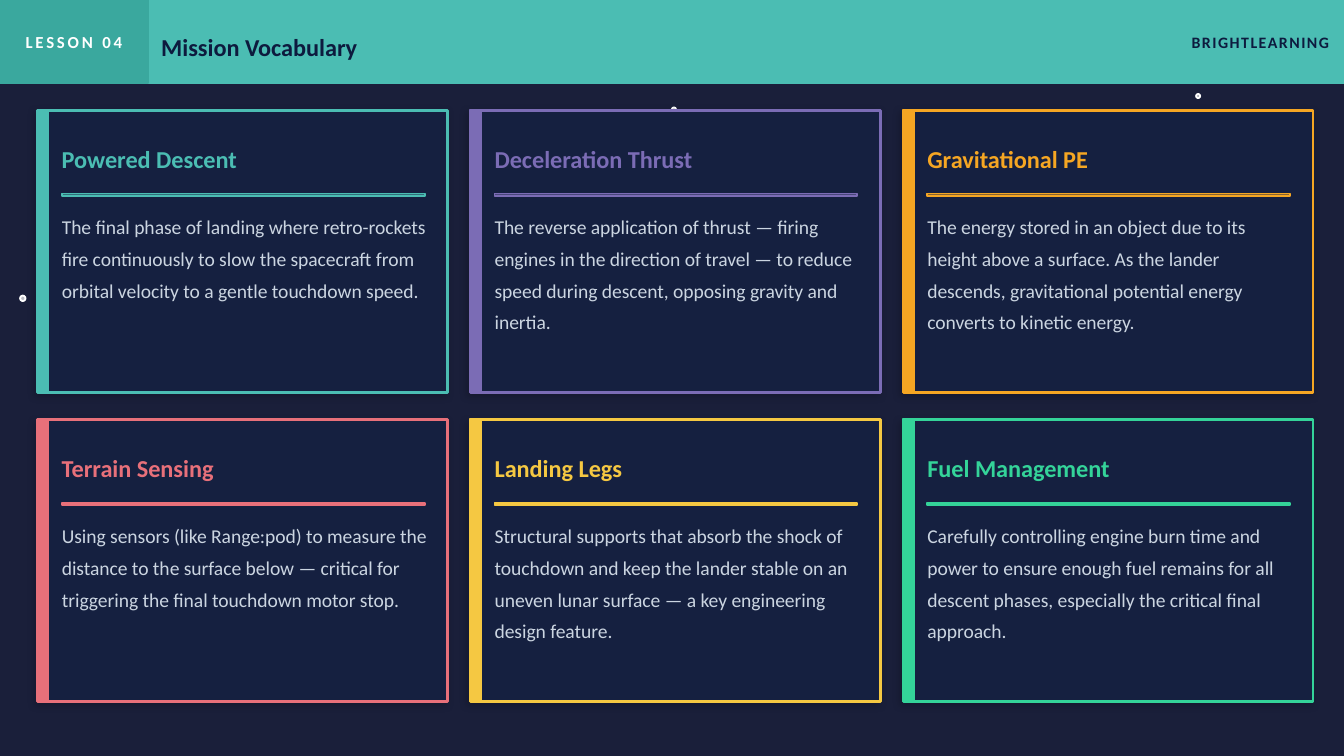
from lxml import etree
from pptx import Presentation
from pptx.dml.color import RGBColor
from pptx.enum.shapes import MSO_SHAPE
from pptx.enum.text import MSO_ANCHOR, PP_ALIGN
from pptx.oxml.ns import qn
from pptx.util import Inches, Pt

RECT, OVAL = MSO_SHAPE.RECTANGLE, MSO_SHAPE.OVAL
TOP, MIDDLE = MSO_ANCHOR.TOP, MSO_ANCHOR.MIDDLE
LEFT, CENTER, RIGHT = PP_ALIGN.LEFT, PP_ALIGN.CENTER, PP_ALIGN.RIGHT

BACKGROUND = RGBColor(0x1A, 0x1F, 0x3A)
CARD = RGBColor(0x15, 0x20, 0x40)
NAVY = RGBColor(0x0D, 0x1B, 0x3E)
WHITE = RGBColor(0xFF, 0xFF, 0xFF)
BODY = RGBColor(0xCB, 0xD5, 0xE1)
TEAL = RGBColor(0x4B, 0xBD, 0xB3)
DARK_TEAL = RGBColor(0x3A, 0xA8, 0x9E)
PURPLE = RGBColor(0x7B, 0x6C, 0xB5)
ORANGE = RGBColor(0xF5, 0xA6, 0x23)
CORAL = RGBColor(0xE8, 0x70, 0x7A)
YELLOW = RGBColor(0xF5, 0xC8, 0x42)
GREEN = RGBColor(0x34, 0xD3, 0x99)

prs = Presentation()
prs.slide_width = Inches(10)
prs.slide_height = prs.slide_width * 9 // 16
s = prs.slides.add_slide(prs.slide_layouts[6])
s.background.fill.solid()
s.background.fill.fore_color.rgb = BACKGROUND


def add_box(x, y, w, h, fill, line=None, width=1, kind=RECT, opacity=100):
    """Add a filled shape; the outline takes the fill colour unless line is given."""
    sp = s.shapes.add_shape(kind, Inches(x), Inches(y), Inches(w), Inches(h))
    sp.shadow.inherit = False
    sp.fill.solid()
    sp.fill.fore_color.rgb = fill
    sp.line.color.rgb = line or fill
    sp.line.width = Pt(width)
    if opacity < 100:
        color = sp._element.spPr.find(qn("a:solidFill"))[0]
        etree.SubElement(color, qn("a:alpha"), val=str(opacity * 1000))
    return sp


def add_text(x, y, w, h, text, size, color, bold=True, align=LEFT, anchor=MIDDLE,
             top=0, right=0, tracking=0, spacing=None):
    """Add a one-paragraph text box; tracking is letter spacing in points."""
    tf = s.shapes.add_textbox(Inches(x), Inches(y), Inches(w), Inches(h)).text_frame
    frame = {"word_wrap": True, "vertical_anchor": anchor,
             "margin_left": 0, "margin_bottom": 0,
             "margin_top": Inches(top), "margin_right": Inches(right)}
    for name, value in frame.items():
        setattr(tf, name, value)
    p = tf.paragraphs[0]
    p.alignment, p.line_spacing = align, spacing
    r = p.add_run()
    r.text = text
    for name, value in {"name": "Calibri", "size": Pt(size), "bold": bold}.items():
        setattr(r.font, name, value)
    r.font.color.rgb = color
    if tracking:
        r._r.get_or_add_rPr().set("spc", str(round(tracking * 100)))


# Stars
for x, y, d, opacity in [(5, 0.8, 0.03, 65), (8.9, 0.7, 0.03, 60), (0.15, 2.2, 0.04, 70)]:
    add_box(x, y, d, d, WHITE, kind=OVAL, opacity=opacity)

# Header
HEADER_H = 0.62
add_box(0, 0, 10, HEADER_H, TEAL)
add_box(0, 0, 1.1, HEADER_H, DARK_TEAL)
add_text(0, 0, 1.1, HEADER_H, "LESSON 04", 9, WHITE, align=CENTER, tracking=1.5)
add_text(1.2, 0, 7.5, HEADER_H, "Mission Vocabulary", 13, NAVY, top=0.08)
add_text(7.7, 0, 2.3, HEADER_H, "BRIGHTLEARNING", 8.5, NAVY, align=RIGHT,
         right=0.11, tracking=0.8)

# Vocabulary cards, three to a row
CARDS = [
    ("Powered Descent", TEAL,
     "The final phase of landing where retro-rockets fire continuously to slow the "
     "spacecraft from orbital velocity to a gentle touchdown speed."),
    ("Deceleration Thrust", PURPLE,
     "The reverse application of thrust — firing engines in the direction of travel — "
     "to reduce speed during descent, opposing gravity and inertia."),
    ("Gravitational PE", ORANGE,
     "The energy stored in an object due to its height above a surface. As the lander "
     "descends, gravitational potential energy converts to kinetic energy."),
    ("Terrain Sensing", CORAL,
     "Using sensors (like Range:pod) to measure the distance to the surface below — "
     "critical for triggering the final touchdown motor stop."),
    ("Landing Legs", YELLOW,
     "Structural supports that absorb the shock of touchdown and keep the lander stable "
     "on an uneven lunar surface — a key engineering design feature."),
    ("Fuel Management", GREEN,
     "Carefully controlling engine burn time and power to ensure enough fuel remains for "
     "all descent phases, especially the critical final approach."),
]
CARD_W, CARD_H = 3.05, 2.1
GAP_X, GAP_Y = 0.17, 0.2

for i, (term, accent, definition) in enumerate(CARDS):
    row, col = divmod(i, 3)
    x = 0.28 + col * (CARD_W + GAP_X)
    y = 0.82 + row * (CARD_H + GAP_Y)
    card = add_box(x, y, CARD_W, CARD_H, CARD, line=accent, width=1.5)
    effects = card._element.spPr.find(qn("a:effectLst"))
    shadow = etree.SubElement(effects, qn("a:outerShdw"), blurRad=str(Pt(4)),
                              dist=str(Pt(2)), dir=str(135 * 60000),
                              algn="bl", rotWithShape="0")
    color = etree.SubElement(shadow, qn("a:srgbClr"), val="000000")
    etree.SubElement(color, qn("a:alpha"), val="18000")

    add_box(x, y, 0.08, CARD_H, accent)
    text_x = x + 0.18
    add_text(text_x, y + 0.12, 2.8, 0.48, term, 13, accent)
    add_box(text_x, y + 0.62, 2.7, 0.02, accent, opacity=50)
    add_text(text_x, y + 0.72, 2.75, 1.25, definition, 10.5, BODY, bold=False,
             anchor=TOP, spacing=1.35)

prs.save("out.pptx")
